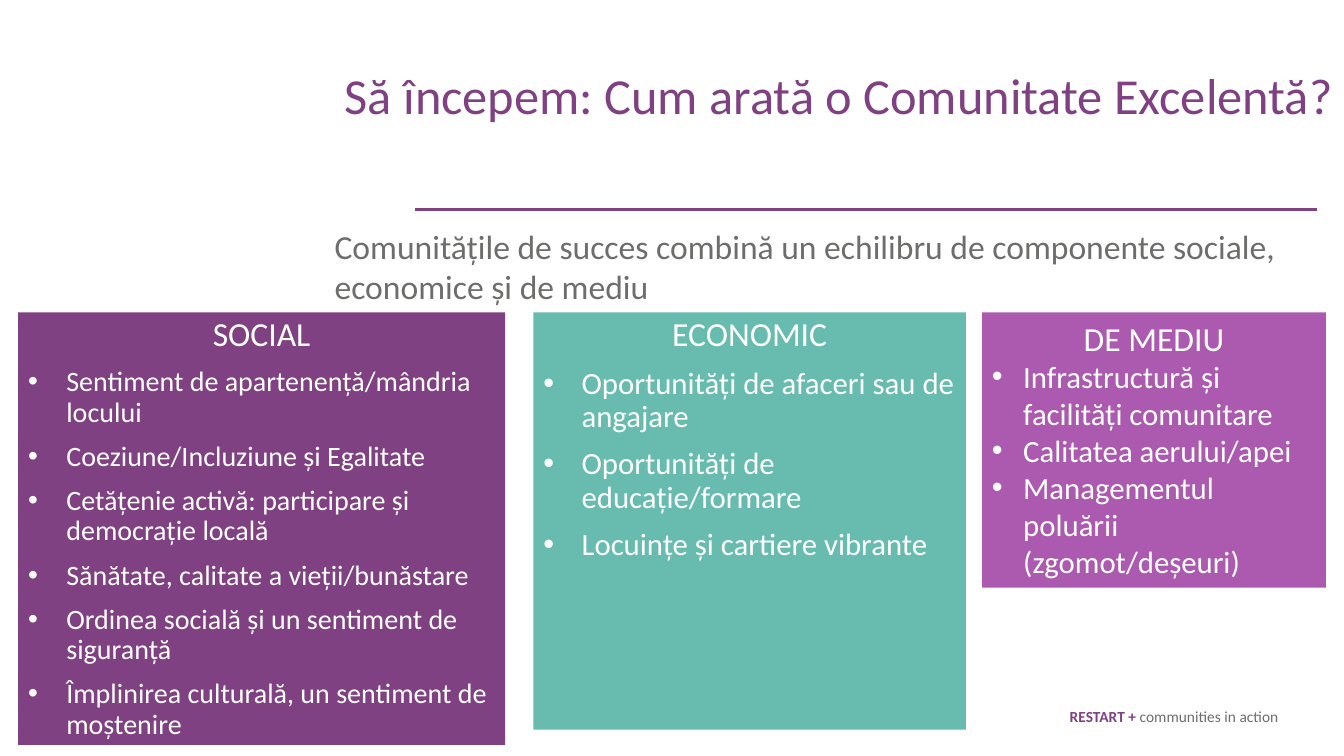
"""Builds the slide on the three components of an excellent community."""
from dataclasses import dataclass

from lxml import etree
from pptx import Presentation
from pptx import util as u
from pptx.dml.color import RGBColor
from pptx.enum import shapes, text
from pptx.oxml import ns

FONT = "Calibri"
PURPLE, TEAL, ORCHID = "7F4182", "68BBAF", "AB5AB0"
GREY, WHITE = "6D6E6C", "FFFFFF"


@dataclass(frozen=True)
class Panel:
    heading: str
    items: tuple[str, ...]
    left: float
    width: float
    height: float
    fill: str
    item_size: int
    indent: float = 0.38
    line_spacing: float = 0.9
    space_before: int = 10


PANELS = (
    Panel("SOCIAL", (
        "Sentiment de apartenență/mândria locului",
        "Coeziune/Incluziune și Egalitate",
        "Cetățenie activă: participare și democrație locală",
        "Sănătate, calitate a vieții/bunăstare",
        "Ordinea socială și un sentiment de siguranță",
        "Împlinirea culturală, un sentiment de moștenire",
    ), 0.18, 4.83, 4.29, PURPLE, 20),
    Panel("ECONOMIC", (
        "Oportunități de afaceri sau de angajare",
        "Oportunități de educație/formare",
        "Locuințe și cartiere vibrante",
    ), 5.29, 4.29, 4.14, TEAL, 22),
    Panel("DE MEDIU", (
        "Infrastructură și facilități comunitare",
        "Calitatea aerului/apei",
        "Managementul poluării (zgomot/deșeuri)",
    ), 9.74, 3.41, 2.73, ORCHID, 22, indent=0.31, line_spacing=1.0, space_before=0),
)


def rgb(value: str) -> RGBColor:
    return RGBColor.from_string(value)


def place(shape, left: float, top: float, width: float, height: float) -> None:
    shape.left, shape.top = u.Inches(left), u.Inches(top)
    shape.width, shape.height = u.Inches(width), u.Inches(height)


def prepare_frame(shape):
    frame = shape.text_frame
    frame.word_wrap = True
    frame.auto_size = text.MSO_AUTO_SIZE.NONE
    frame.vertical_anchor = text.MSO_ANCHOR.TOP
    return frame


def add_run(paragraph, content: str, *, size: int, color: str, bold: bool = False) -> None:
    run = paragraph.add_run()
    run.text = content
    run.font.name = FONT
    run.font.size = u.Pt(size)
    run.font.bold = bold
    run.font.color.rgb = rgb(color)


def format_paragraph(paragraph, *, align=text.PP_ALIGN.LEFT, line_spacing: float = 1.0,
                     space_before: int = 0) -> None:
    paragraph.alignment = align
    paragraph.line_spacing = line_spacing
    paragraph.space_before = u.Pt(space_before)


def add_bullet(paragraph, indent: float) -> None:
    properties = paragraph._p.get_or_add_pPr()
    properties.set("marL", str(u.Inches(indent)))
    properties.set("indent", str(-u.Inches(indent)))
    etree.SubElement(properties, ns.qn("a:buFont")).set("typeface", "Arial")
    etree.SubElement(properties, ns.qn("a:buChar")).set("char", "•")


def add_text_box(slide, left: float, top: float, width: float, height: float):
    box = slide.shapes.add_textbox(0, 0, 0, 0)
    place(box, left, top, width, height)
    return prepare_frame(box).paragraphs[0]


def add_title(slide) -> None:
    title = slide.shapes.title
    place(title, 3.32, 0.65, 10.27, 1.12)
    paragraph = prepare_frame(title).paragraphs[0]
    format_paragraph(paragraph, line_spacing=0.9)
    add_run(paragraph, "Să începem: Cum arată o Comunitate Excelentă?", size=36, color=PURPLE)


def add_rule(slide) -> None:
    rule = slide.shapes.add_connector(
        shapes.MSO_CONNECTOR.STRAIGHT,
        u.Inches(4.12), u.Inches(2.08), u.Inches(13.06), u.Inches(2.08))
    rule.line.color.rgb = rgb(PURPLE)
    rule.line.width = u.Pt(2.25)
    etree.SubElement(rule._element.spPr, ns.qn("a:effectLst"))


def add_panel(slide, panel: Panel) -> None:
    shape = slide.shapes.add_shape(shapes.MSO_SHAPE.RECTANGLE, 0, 0, 0, 0)
    place(shape, panel.left, 3.1, panel.width, panel.height)
    shape.shadow.inherit = False
    shape.fill.solid()
    shape.fill.fore_color.rgb = rgb(panel.fill)
    shape.line.fill.background()
    frame = prepare_frame(shape)
    heading = frame.paragraphs[0]
    format_paragraph(heading, align=text.PP_ALIGN.CENTER, line_spacing=panel.line_spacing)
    add_run(heading, panel.heading, size=24, color=WHITE)
    for item in panel.items:
        paragraph = frame.add_paragraph()
        format_paragraph(paragraph, line_spacing=panel.line_spacing,
                         space_before=panel.space_before)
        add_bullet(paragraph, panel.indent)
        add_run(paragraph, item, size=panel.item_size, color=WHITE)


def main() -> None:
    presentation = Presentation()
    presentation.slide_width = u.Inches(13.33)
    presentation.slide_height = u.Inches(7.5)
    slide = presentation.slides.add_slide(presentation.slide_layouts.get_by_name("Title Only"))

    footer = add_text_box(slide, 0.31, 6.97, 12.47, 0.45)
    format_paragraph(footer, align=text.PP_ALIGN.RIGHT)
    add_run(footer, "RESTART + ", size=11, color=PURPLE, bold=True)
    add_run(footer, "communities in action", size=11, color=GREY)

    add_rule(slide)
    add_title(slide)
    for panel in PANELS:
        add_panel(slide, panel)

    summary = add_text_box(slide, 3.22, 2.19, 9.53, 0.91)
    format_paragraph(summary)
    add_run(summary, "Comunitățile de succes combină un echilibru de componente sociale, "
                     "economice și de mediu", size=24, color=GREY)

    presentation.save("out.pptx")


if __name__ == "__main__":
    main()
